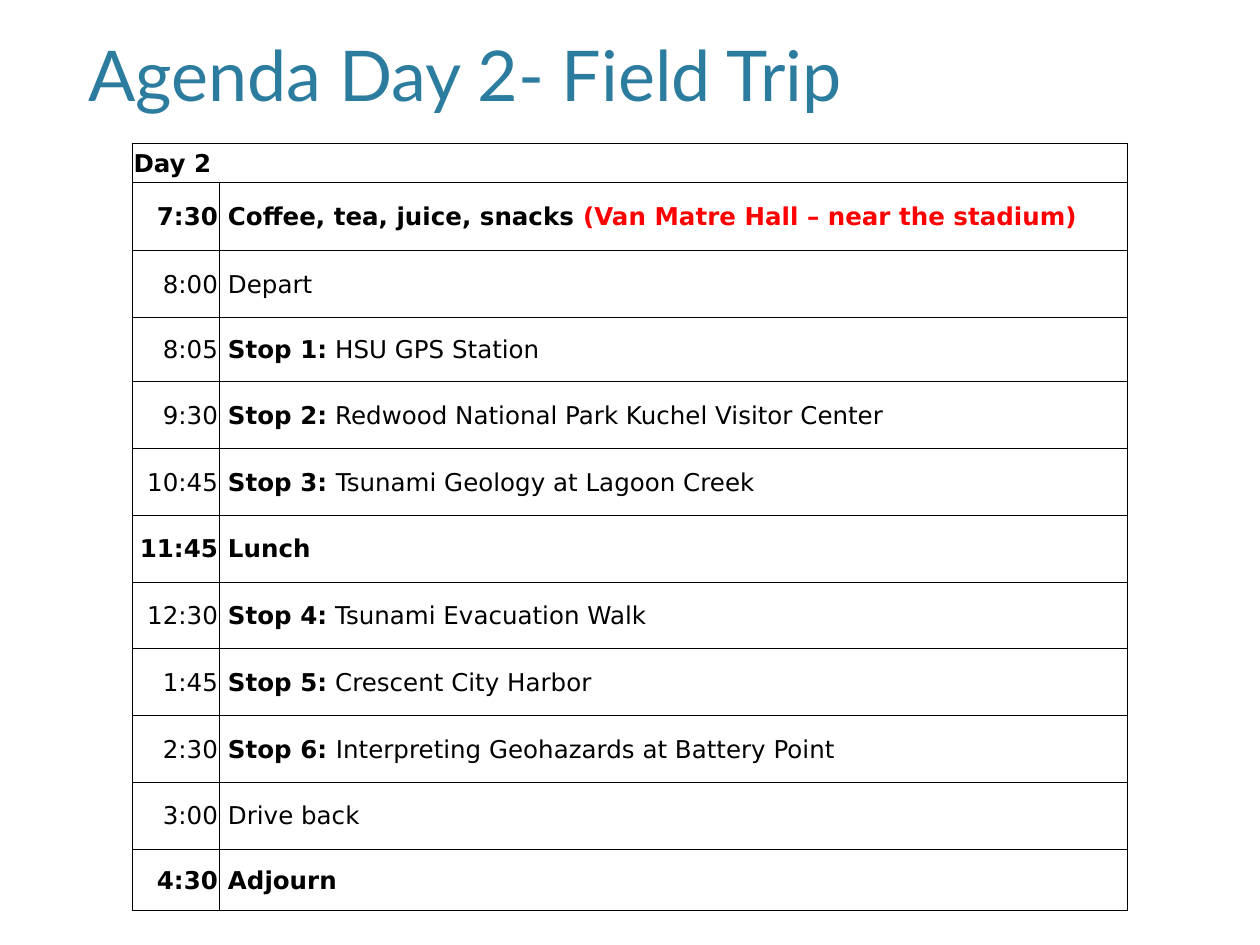
from lxml import etree
from pptx import Presentation
from pptx.dml.color import RGBColor
from pptx.enum.text import MSO_ANCHOR, PP_ALIGN
from pptx.oxml.ns import qn
from pptx.util import Inches, Pt

MIDDLE, BOTTOM = MSO_ANCHOR.MIDDLE, MSO_ANCHOR.BOTTOM
LEFT, RIGHT = PP_ALIGN.LEFT, PP_ALIGN.RIGHT
TITLE_ONLY = 5
COLORS = {"title": "2C7C9F", "text": "000000", "notice": "FF0000", "border": "000000"}
TITLE_FONT, TABLE_FONT = "Lato", "DejaVu Sans"
COLUMN_WIDTHS = [0.69, 7.21]
ROW_HEIGHTS = [0.31, 0.54, 0.53, 0.51] + [0.53] * 7 + [0.49]

# time, bold lead, regular text, red notice
AGENDA = [
    ("7:30", "Coffee, tea, juice, snacks ", "", "(Van Matre Hall – near the stadium)"),
    ("8:00", "", "Depart", ""),
    ("8:05", "Stop 1:", " HSU GPS Station", ""),
    ("9:30", "Stop 2:", " Redwood National Park Kuchel Visitor Center", ""),
    ("10:45", "Stop 3: ", "Tsunami Geology at Lagoon Creek", ""),
    ("11:45", "Lunch", "", ""),
    ("12:30", "Stop 4:", " Tsunami Evacuation Walk", ""),
    ("1:45", "Stop 5:", " Crescent City Harbor", ""),
    ("2:30", "Stop 6: ", "Interpreting Geohazards at Battery Point", ""),
    ("3:00", "", "Drive back", ""),
    ("4:30", "Adjourn", "", ""),
]


def format_font(font, name, size, color, bold=False):
    font.name, font.size, font.bold = name, Pt(size), bold
    font.color.rgb = RGBColor.from_string(COLORS[color])


def add_title(slide, left, top, width, height):
    title = slide.shapes.title
    title.left, title.top = Inches(left), Inches(top)
    title.width, title.height = Inches(width), Inches(height)
    frame = title.text_frame
    frame.text = "Agenda Day 2- Field Trip"
    frame.vertical_anchor = BOTTOM
    paragraph = frame.paragraphs[0]
    paragraph.alignment = LEFT
    format_font(paragraph.runs[0].font, TITLE_FONT, 40, "title")


def format_cell(cell):
    properties = cell._tc.get_or_add_tcPr()
    for side in ("a:lnL", "a:lnR", "a:lnT", "a:lnB"):
        line = etree.SubElement(properties, qn(side), w=str(Pt(0.5)))
        fill = etree.SubElement(line, qn("a:solidFill"))
        etree.SubElement(fill, qn("a:srgbClr"), val=COLORS["border"])
    cell.fill.background()
    cell.vertical_anchor = MIDDLE
    cell.margin_left = cell.margin_right = cell.margin_top = Inches(0.01)
    cell.margin_bottom = 0


def write_cell(cell, parts, alignment=LEFT, indent=0):
    paragraph = cell.text_frame.paragraphs[0]
    paragraph.alignment = alignment
    if indent:
        paragraph._p.get_or_add_pPr().set("marL", str(Inches(indent)))
    for text, bold, color in parts:
        if text:
            run = paragraph.add_run()
            run.text = text
            format_font(run.font, TABLE_FONT, 14, color, bold)


def add_agenda(slide, left, top, width, height):
    table = slide.shapes.add_table(
        len(ROW_HEIGHTS), len(COLUMN_WIDTHS),
        Inches(left), Inches(top), Inches(width), Inches(height),
    ).table
    table.first_row = table.horz_banding = False
    for column, column_width in zip(table.columns, COLUMN_WIDTHS):
        column.width = Inches(column_width)
    for row, row_height in zip(table.rows, ROW_HEIGHTS):
        row.height = Inches(row_height)
        for cell in row.cells:
            format_cell(cell)

    table.cell(0, 0).merge(table.cell(0, 1))
    write_cell(table.cell(0, 0), [("Day 2", True, "text")])
    for index, (time, lead, text, notice) in enumerate(AGENDA, start=1):
        time_bold = bool(lead) and not text
        write_cell(table.cell(index, 0), [(time, time_bold, "text")], RIGHT)
        parts = [(lead, True, "text"), (text, False, "text"), (notice, True, "notice")]
        write_cell(table.cell(index, 1), parts, indent=0.06)


def main():
    presentation = Presentation()
    presentation.slide_width, presentation.slide_height = Inches(10), Inches(7.5)
    slide = presentation.slides.add_slide(presentation.slide_layouts[TITLE_ONLY])
    add_title(slide, 0.6, 0.12, 8.8, 0.85)
    add_agenda(slide, 1.05, 1.14, 7.9, 6.07)
    presentation.save("out.pptx")


if __name__ == "__main__":
    main()
